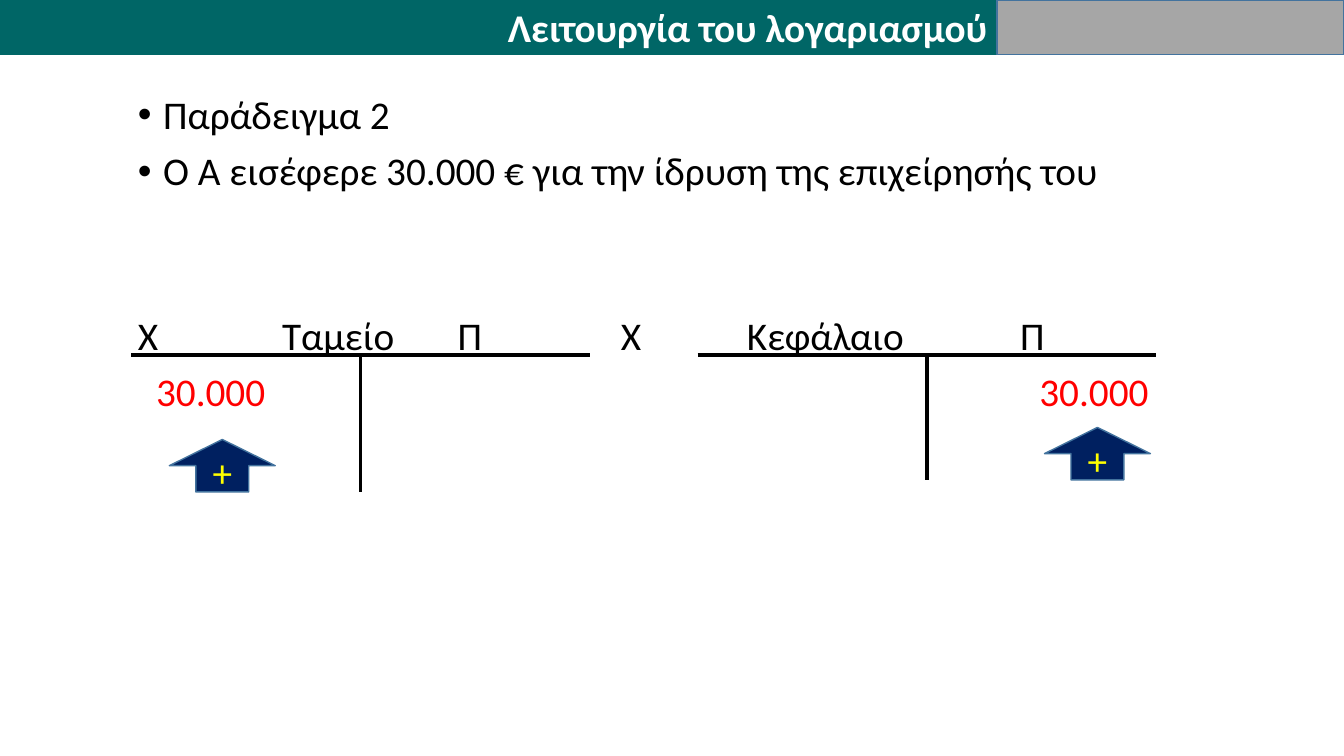
from lxml.etree import SubElement
from pptx import Presentation
from pptx.dml.color import RGBColor
from pptx.enum.shapes import MSO_CONNECTOR, MSO_SHAPE
from pptx.enum.text import MSO_ANCHOR, PP_ALIGN
from pptx.oxml.ns import qn
from pptx.util import Inches, Pt

# Content
TITLE = "Λειτουργία του λογαριασμού"
BULLETS = ["Παράδειγμα 2", "Ο Α εισέφερε 30.000 € για την ίδρυση της επιχείρησής του"]
ACCOUNT_LABELS = ["Χ", "Ταμείο", "Π", "Χ", "Κεφάλαιο", "Π"]
AMOUNTS = ["30.000", "30.000"]

# Text columns, measured from the text edge of the ledger box
LABEL_TABS = [1.43, 3.17, 4.79, 6.04, 8.75]
AMOUNT_TABS = [0.18, 8.94]

# T accounts: left edge, bottom of the stem, left edge of the arrow
ACCOUNTS = [(1.30, 4.88, 1.68), (6.92, 4.76, 10.36)]
ACCOUNT_WIDTH, ACCOUNT_TOP = 4.55, 3.52
ARROW_WIDTH, ARROW_HEIGHT = 1.05, 0.52

BAR_WIDTH, BAR_HEIGHT = 9.89, 0.54
SLIDE_WIDTH, SLIDE_HEIGHT = 13.33, 7.5
BODY_LEFT, BODY_WIDTH = 1.27, 11.31

TEAL = RGBColor(0x00, 0x66, 0x66)
GRAY = RGBColor(0xA6, 0xA6, 0xA6)
NAVY = RGBColor(0x00, 0x20, 0x60)
OUTLINE = RGBColor(0x43, 0x73, 0x9E)
BLACK = RGBColor(0x00, 0x00, 0x00)
WHITE = RGBColor(0xFF, 0xFF, 0xFF)
RED = RGBColor(0xFF, 0x00, 0x00)
YELLOW = RGBColor(0xFF, 0xFF, 0x00)


def write(paragraph, text, color=BLACK, bold=False, align=PP_ALIGN.LEFT,
          spacing=None, before=0, bullet=False, tabs=()):
    properties = paragraph._p.get_or_add_pPr()
    if bullet:
        properties.set("marL", str(Inches(0.25)))
        properties.set("indent", str(-Inches(0.25)))
        SubElement(properties, qn("a:buFont"), typeface="Arial")
        SubElement(properties, qn("a:buChar"), char="•")
    if tabs:
        tab_list = SubElement(properties, qn("a:tabLst"))
        for position in tabs:
            SubElement(tab_list, qn("a:tab"), pos=str(Inches(position)), algn="l")
    paragraph.alignment = align
    paragraph.space_before = Pt(before)
    if spacing:
        paragraph.line_spacing = spacing
    run = paragraph.add_run()
    run.text = text
    run.font.name = "Calibri"
    run.font.size = Pt(28)
    run.font.bold = bold
    run.font.color.rgb = color


def paint(shape, fill, line):
    shape.fill.solid()
    shape.fill.fore_color.rgb = fill
    shape.line.color.rgb = line
    shape.line.width = Pt(1)


def add_box(slide, kind, left, top, width, height, fill):
    shape = slide.shapes.add_shape(
        kind, Inches(left), Inches(top), Inches(width), Inches(height))
    shape.shadow.inherit = False
    paint(shape, fill, OUTLINE)
    return shape


def add_line(slide, x1, y1, x2, y2):
    line = slide.shapes.add_connector(
        MSO_CONNECTOR.STRAIGHT, Inches(x1), Inches(y1), Inches(x2), Inches(y2))
    line.line.color.rgb = BLACK
    line.line.width = Pt(2.5)
    SubElement(line._element.spPr, qn("a:effectLst"))


def add_body(slide, top, rows):
    """Rows are (text, format) pairs, one paragraph each."""
    box = slide.shapes.add_textbox(
        Inches(BODY_LEFT), Inches(top), Inches(BODY_WIDTH), Inches(1.1))
    frame = box.text_frame
    frame.word_wrap = True
    for index, (text, options) in enumerate(rows):
        paragraph = frame.add_paragraph() if index else frame.paragraphs[0]
        write(paragraph, text, spacing=0.9, before=10 if index else 0, **options)


def main():
    presentation = Presentation()
    presentation.slide_width = Inches(SLIDE_WIDTH)
    presentation.slide_height = Inches(SLIDE_HEIGHT)
    slide = presentation.slides.add_slide(presentation.slide_layouts[5])

    # Title bar
    title = slide.shapes.title
    title.left, title.top = Inches(0), Inches(0)
    title.width, title.height = Inches(BAR_WIDTH), Inches(BAR_HEIGHT)
    paint(title, TEAL, TEAL)
    title.text_frame.vertical_anchor = MSO_ANCHOR.MIDDLE
    write(title.text_frame.paragraphs[0], TITLE, color=WHITE, bold=True,
          align=PP_ALIGN.RIGHT)
    add_box(slide, MSO_SHAPE.RECTANGLE, BAR_WIDTH, 0,
            SLIDE_WIDTH - BAR_WIDTH, BAR_HEIGHT, GRAY)

    # Example and ledger text
    add_body(slide, 0.9, [(text, {"bullet": True}) for text in BULLETS])
    add_body(slide, 3.09, [
        ("\t".join(ACCOUNT_LABELS), {"tabs": LABEL_TABS}),
        ("\t" + "\t".join(AMOUNTS), {"tabs": AMOUNT_TABS, "color": RED}),
    ])

    # T accounts with their increase arrows
    for left, bottom, arrow_left in ACCOUNTS:
        middle = left + ACCOUNT_WIDTH / 2
        add_line(slide, left, ACCOUNT_TOP, left + ACCOUNT_WIDTH, ACCOUNT_TOP)
        add_line(slide, middle, ACCOUNT_TOP, middle, bottom)
        arrow = add_box(slide, MSO_SHAPE.UP_ARROW, arrow_left, bottom - ARROW_HEIGHT,
                        ARROW_WIDTH, ARROW_HEIGHT, NAVY)
        arrow.text_frame.vertical_anchor = MSO_ANCHOR.MIDDLE
        write(arrow.text_frame.paragraphs[0], "+", color=YELLOW, align=PP_ALIGN.CENTER)

    presentation.save("out.pptx")


if __name__ == "__main__":
    main()
